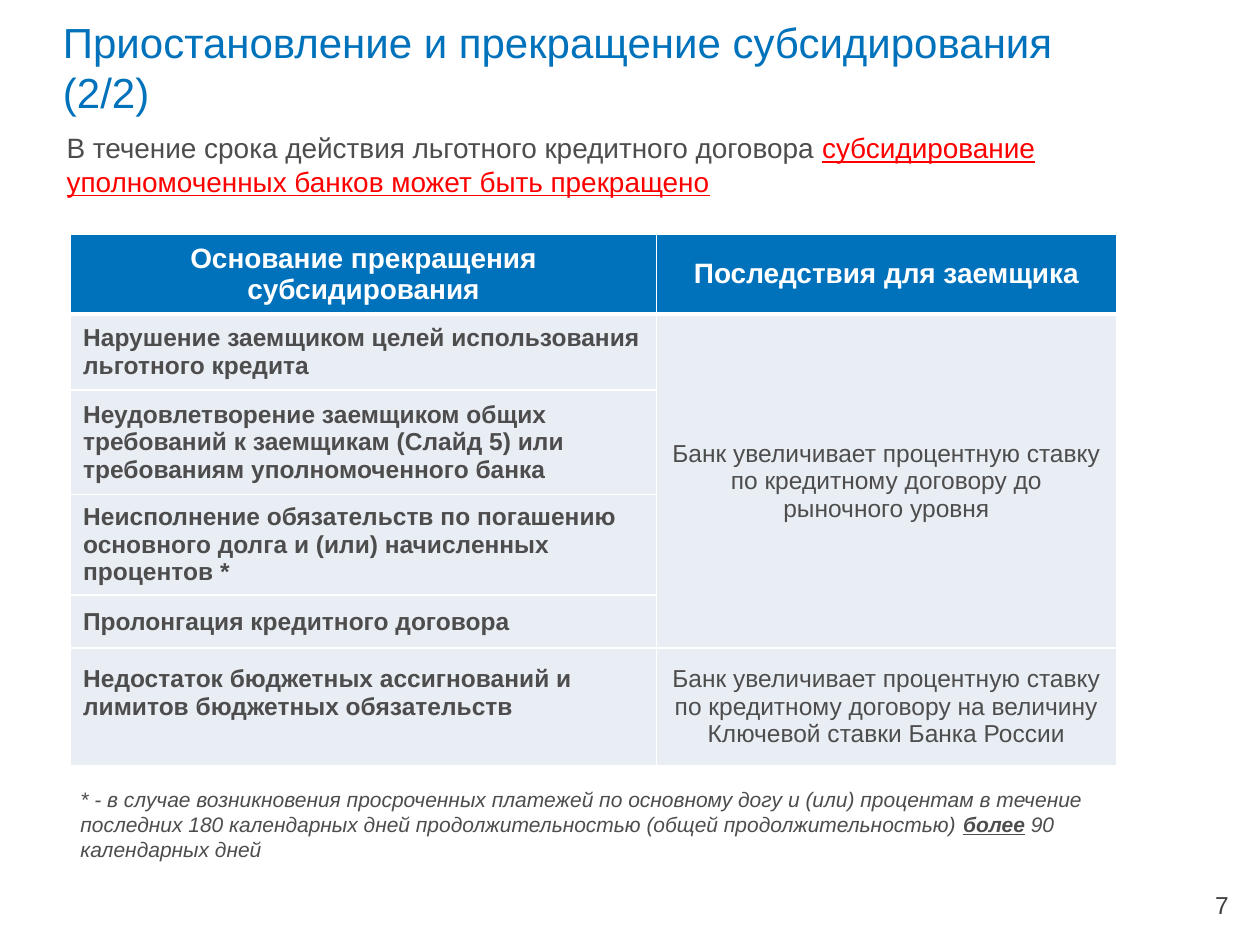
from lxml import etree
from pptx import Presentation
from pptx.dml.color import RGBColor
from pptx.enum.text import MSO_ANCHOR, PP_ALIGN
from pptx.oxml.ns import qn
from pptx.util import Inches, Pt

LEFT, CENTER, RIGHT = PP_ALIGN.LEFT, PP_ALIGN.CENTER, PP_ALIGN.RIGHT
TOP, MIDDLE = MSO_ANCHOR.TOP, MSO_ANCHOR.MIDDLE

BLUE, GRAY, DARK, RED = "0072BC", "4D4D4D", "404040", "FF0000"
WHITE, PALE = "FFFFFF", "E9EDF4"

COLUMNS = (4.65, 3.65)
ROWS = (0.62, 0.6, 0.83, 0.8, 0.42, 0.93)
HEADINGS = ("Основание прекращения субсидирования", "Последствия для заемщика")
GROUNDS = (
    "Нарушение заемщиком целей использования льготного кредита",
    "Неудовлетворение заемщиком общих требований к заемщикам (Слайд 5) "
    "или требованиям уполномоченного банка",
    "Неисполнение обязательств по погашению основного долга и (или) "
    "начисленных процентов *",
    "Пролонгация кредитного договора",
    "Недостаток бюджетных ассигнований и лимитов бюджетных обязательств",
)
MARKET_RATE = ("Банк увеличивает процентную ставку по кредитному договору "
               "до рыночного уровня")
KEY_RATE = ("Банк увеличивает процентную ставку по кредитному договору "
            "на величину Ключевой ставки Банка России")


def color(value):
    return RGBColor.from_string(value)


def write(frame, runs, size, ink, align=LEFT, **base):
    """Fill the first paragraph with (text, font overrides) runs."""
    paragraph = frame.paragraphs[0]
    paragraph.alignment = align
    for text, overrides in runs:
        run = paragraph.add_run()
        run.text = text
        style = {"name": "Arial", "size": Pt(size), "ink": ink, **base, **overrides}
        run.font.color.rgb = color(style.pop("ink"))
        for attribute, value in style.items():
            setattr(run.font, attribute, value)


def add_text(slide, box, runs, size, ink, align=LEFT, anchor=TOP, inset=None, **base):
    frame = slide.shapes.add_textbox(*map(Inches, box)).text_frame
    frame.word_wrap = True
    frame.vertical_anchor = anchor
    if inset is not None:
        for side in ("left", "top", "right", "bottom"):
            setattr(frame, f"margin_{side}", Inches(inset))
    write(frame, runs, size, ink, align, **base)


def set_borders(cell, widths):
    """Draw white borders; widths are points for left, right, top, bottom."""
    properties = cell._tc.get_or_add_tcPr()
    for index, (side, width) in enumerate(zip("LRTB", widths)):
        line = etree.Element(qn(f"a:ln{side}"), w=str(Pt(width)))
        fill = etree.SubElement(line, qn("a:solidFill"))
        etree.SubElement(fill, qn("a:srgbClr"), val=WHITE)
        properties.insert(index, line)


def fill_cell(cell, text, size, ink, align, bold):
    cell.vertical_anchor = MIDDLE
    write(cell.text_frame, [(text, {})], size, ink, align, bold=bold)


def add_grounds_table(slide):
    table = slide.shapes.add_table(
        len(ROWS), len(COLUMNS), Inches(0.56), Inches(1.86),
        Inches(sum(COLUMNS)), Inches(sum(ROWS))).table
    for column, width in zip(table.columns, COLUMNS):
        column.width = Inches(width)
    for row, height in zip(table.rows, ROWS):
        row.height = Inches(height)

    for r in range(len(ROWS)):
        for c in range(len(COLUMNS)):
            cell = table.cell(r, c)
            cell.fill.solid()
            cell.fill.fore_color.rgb = color(PALE if r else BLUE)
            set_borders(cell, (1, 1, 3 if r == 1 else 1, 1 if r else 3))

    for c, heading in enumerate(HEADINGS):
        fill_cell(table.cell(0, c), heading, 16, WHITE, CENTER, True)
    for r, ground in enumerate(GROUNDS, start=1):
        fill_cell(table.cell(r, 0), ground, 14, GRAY, LEFT, True)
    table.cell(1, 1).merge(table.cell(4, 1))
    for r, consequence in ((1, MARKET_RATE), (5, KEY_RATE)):
        fill_cell(table.cell(r, 1), consequence, 14, GRAY, CENTER, False)
    table.cell(5, 0).margin_bottom = Inches(0.27)


def main():
    deck = Presentation()
    deck.slide_width, deck.slide_height = Inches(10), Inches(7.5)
    slide = deck.slides.add_slide(deck.slide_layouts[6])

    add_text(slide, (0.5, 0.13, 8.44, 0.95),
             [("Приостановление и прекращение субсидирования (2/2)", {})],
             24, BLUE, inset=0)
    add_text(slide, (7.52, 6.98, 2.33, 0.4), [("7", {})], 14, DARK, RIGHT, MIDDLE)
    add_text(slide, (0.43, 0.99, 9.28, 0.64), [
        ("В течение срока действия льготного кредитного договора ", {}),
        ("субсидирование уполномоченных банков может быть прекращено",
         {"ink": RED, "underline": True}),
    ], 16, GRAY)
    add_grounds_table(slide)
    add_text(slide, (0.54, 6.19, 8.56, 0.71), [
        ("* - в случае возникновения просроченных платежей по основному догу "
         "и (или) процентам в течение последних 180 календарных дней "
         "продолжительностью (общей продолжительностью) ", {}),
        ("более", {"bold": True, "underline": True}),
        (" 90 календарных дней", {}),
    ], 12, GRAY, italic=True)

    deck.save("out.pptx")


if __name__ == "__main__":
    main()
